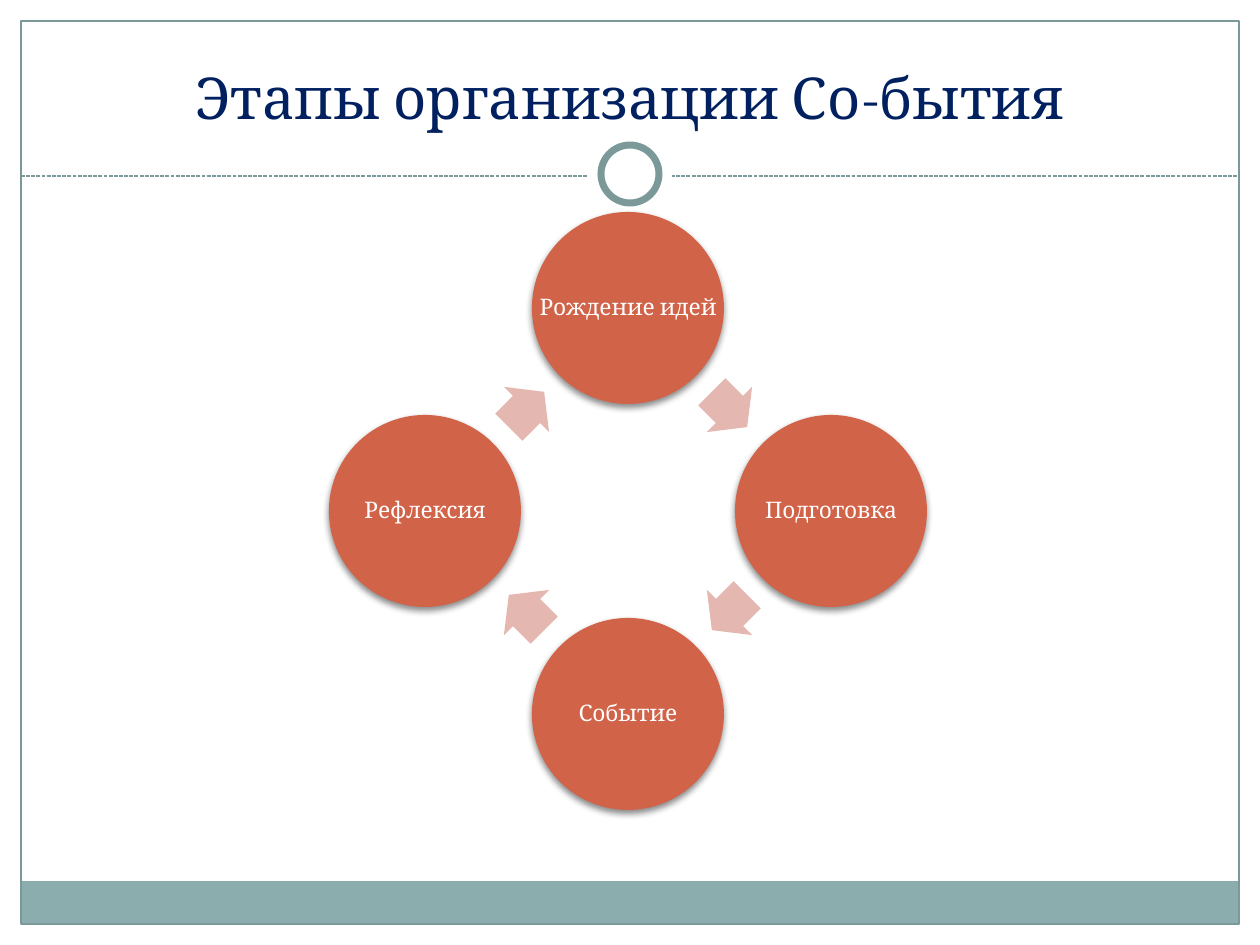
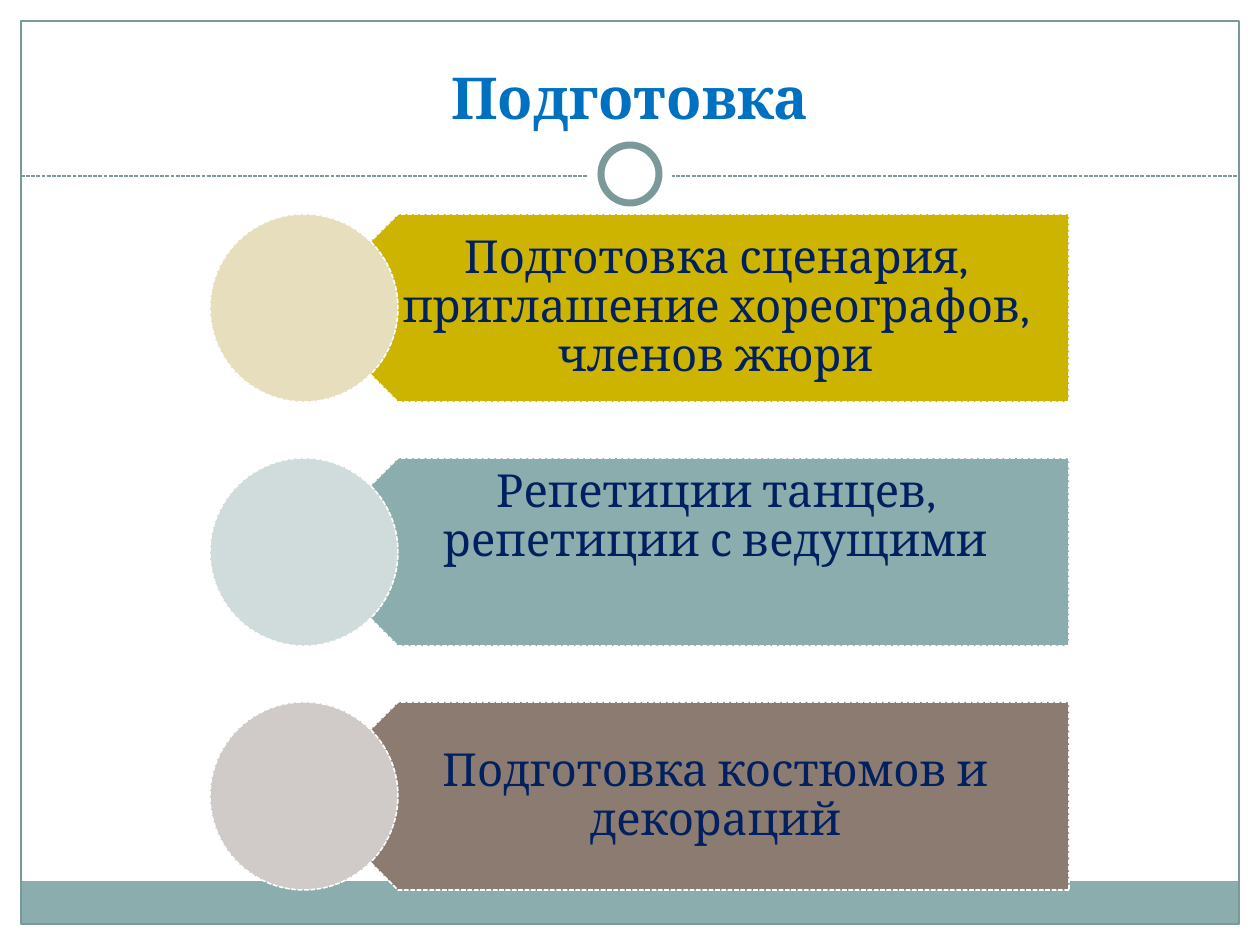
from lxml import etree
from pptx import Presentation
from pptx.dml.color import RGBColor
from pptx.enum.dml import MSO_LINE
from pptx.enum.shapes import MSO_CONNECTOR, MSO_SHAPE, PP_PLACEHOLDER
from pptx.enum.text import MSO_ANCHOR, MSO_AUTO_SIZE, PP_ALIGN
from pptx.oxml import parse_xml
from pptx.oxml.ns import nsdecls, qn
from pptx.util import Pt

PX = 914400 / 126
RECT, OVAL = MSO_SHAPE.RECTANGLE, MSO_SHAPE.OVAL
ARROW, PLATE = MSO_SHAPE.RIGHT_ARROW, MSO_SHAPE.PENTAGON
DASH = MSO_LINE.SQUARE_DOT
TOP, MIDDLE, BOTTOM = MSO_ANCHOR.TOP, MSO_ANCHOR.MIDDLE, MSO_ANCHOR.BOTTOM
CENTER = PP_ALIGN.CENTER
FONT = "Cambria"
COLORS = {
    "white": "FFFFFF", "teal": "8CADAE", "frame": "7C999A",
    "navy": "002060", "blue": "0070C0",
    "stage": "D16349", "arrow": "E5B7B1",
    "gold": "CCB400", "pale gold": "E7DEBD", "pale teal": "D0DBDB",
    "brown": "8C7B70", "pale brown": "D0CBC9",
}
COLORS = {name: RGBColor.from_string(value) for name, value in COLORS.items()}
SHADOW = (f'<a:outerShdw {nsdecls("a")} blurRad="50800" dist="25400" dir="5400000">'
          '<a:srgbClr val="000000"><a:alpha val="45000"/></a:srgbClr></a:outerShdw>')


def draw(page, kind, left, top, width, height, fill=None, line=None, weight=0.75, dash=None):
    shape = page.shapes.add_shape(kind, *(round(n * PX) for n in (left, top, width, height)))
    shape.shadow.inherit = False
    if fill:
        shape.fill.solid()
        shape.fill.fore_color.rgb = COLORS[fill]
    else:
        shape.fill.background()
    if line:
        shape.line.color.rgb = COLORS[line]
        shape.line.width = Pt(weight)
        shape.line.dash_style = dash
    else:
        shape.line.fill.background()
    return shape


def write(box, place, text, size, color, insets, anchor=MIDDLE, spacing=0.9, bold=False):
    box.left, box.top, box.width, box.height = (round(n * PX) for n in place)
    frame = box.text_frame
    frame.word_wrap = True
    frame.auto_size = MSO_AUTO_SIZE.NONE
    frame.vertical_anchor = anchor
    (frame.margin_left, frame.margin_top,
     frame.margin_right, frame.margin_bottom) = (round(n * PX) for n in insets)
    para = frame.paragraphs[0]
    para.text = text
    para.alignment = CENTER
    para.line_spacing = spacing
    para.font.name = FONT
    para.font.size = Pt(size)
    para.font.bold = bold
    para.font.color.rgb = COLORS[color]


deck = Presentation()
deck.slide_width, deck.slide_height = round(1260 * PX), round(945 * PX)
layout = deck.slide_layouts[5]
for holder in list(layout.placeholders):
    if holder.placeholder_format.type != PP_PLACEHOLDER.TITLE:
        holder.element.getparent().remove(holder.element)

# Titles
pages = []
for title, color, bold in (("Этапы организации Со-бытия", "navy", False),
                           ("Подготовка", "blue", True)):
    page = deck.slides.add_slide(layout)
    write(page.shapes.title, (42, 32, 1176, 105), title, 33, color,
          (13, 6, 13, 6), BOTTOM, 1.0, bold)
    pages.append(page)
cycle, preparation = pages

# Frame, footer band and ring, moved to the shared layout
rule = cycle.shapes.add_connector(MSO_CONNECTOR.STRAIGHT, *(
    round(n * PX) for n in (21, 176, 1239, 176)))
rule.line.color.rgb = COLORS["frame"]
rule.line.width = Pt(0.75)
rule.line.dash_style = DASH
etree.SubElement(rule.element.spPr, qn("a:effectLst"))
decor = [
    draw(cycle, RECT, 0, 0, 1260, 192, "white"),
    draw(cycle, RECT, 0, 0, 21, 945, "white"),
    draw(cycle, RECT, 1239, 0, 21, 945, "white"),
    draw(cycle, RECT, 21, 881, 1218, 43, "teal"),
    draw(cycle, RECT, 21, 21, 1218, 903, None, "frame"),
    rule,
    draw(cycle, OVAL, 588, 132, 84, 84, "white"),
    draw(cycle, OVAL, 601, 145, 58, 58, "white", "frame", 4),
]
for part in decor:
    layout.shapes.element.append(part.element)

# Cycle of stages, clockwise from the top
MID_X, MID_Y, RADIUS, STAGE = 628, 511, 203, 192
ARROW_LENGTH, ARROW_HEIGHT = 50, 64
stages = [("Рождение идей", 0, -1), ("Подготовка", 1, 0),
          ("Событие", 0, 1), ("Рефлексия", -1, 0)]
for index, (name, across, down) in enumerate(stages):
    x, y = MID_X + across * RADIUS, MID_Y + down * RADIUS
    place = (x - STAGE / 2, y - STAGE / 2, STAGE, STAGE)
    circle = draw(cycle, OVAL, *place, "stage")
    circle.element.spPr.find(qn("a:effectLst")).append(parse_xml(SHADOW))
    write(cycle.shapes.add_textbox(0, 0, 0, 0), place, name, 13, "white", (2, 2, 2, 2))

    _, next_across, next_down = stages[(index + 1) % len(stages)]
    arrow_x = MID_X + (across + next_across) * RADIUS / 2
    arrow_y = MID_Y + (down + next_down) * RADIUS / 2
    arrow = draw(cycle, ARROW, arrow_x - ARROW_LENGTH / 2, arrow_y - ARROW_HEIGHT / 2,
                 ARROW_LENGTH, ARROW_HEIGHT, "arrow")
    arrow.adjustments[0], arrow.adjustments[1] = 0.6, 0.5
    arrow.rotation = 45 + 90 * index

# Preparation tasks
BAR_TOP, BAR_PITCH, BAR_HEIGHT = 214, 244, 188
tasks = [
    ("Подготовка сценария, приглашение хореографов, членов жюри",
     "gold", "pale gold", MIDDLE, 14),
    ("Репетиции танцев, репетиции с ведущими", "teal", "pale teal", TOP, 10),
    ("Подготовка костюмов и декораций", "brown", "pale brown", MIDDLE, 14),
]
for index, (task, fill, pale, anchor, inset) in enumerate(tasks):
    top = BAR_TOP + index * BAR_PITCH
    place = (304, top, 765, BAR_HEIGHT)
    plate = draw(preparation, PLATE, *place, fill, "white", 0.9, DASH)
    plate.rotation = 180
    write(preparation.shapes.add_textbox(0, 0, 0, 0), place, task, 26, "navy",
          (83, inset, 25, 14), anchor)
    draw(preparation, OVAL, 210, top, BAR_HEIGHT, BAR_HEIGHT, pale, "white", 0.9, DASH)

deck.save("out.pptx")
